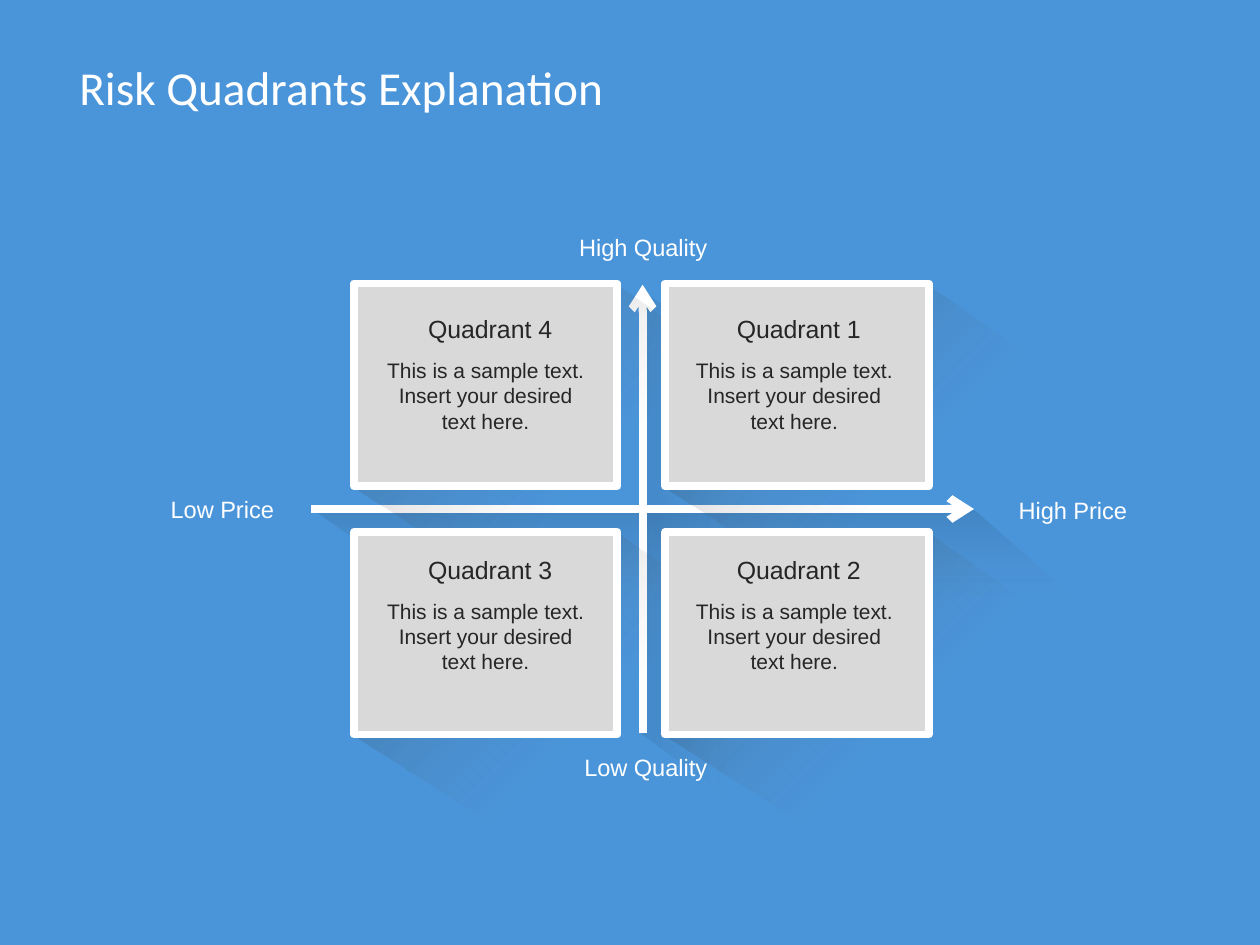
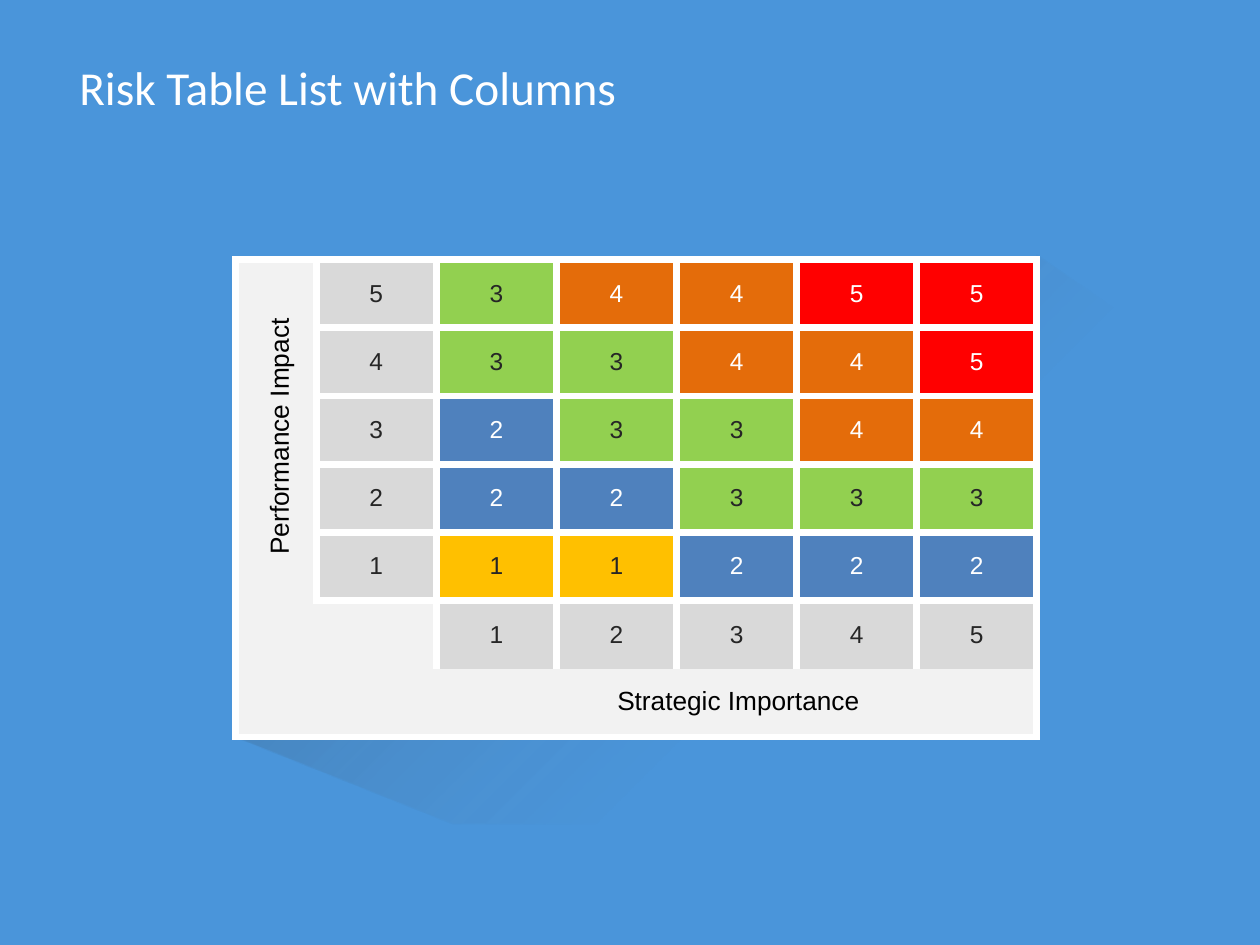
from lxml import etree
from pptx import Presentation
from pptx.dml.color import RGBColor
from pptx.enum.shapes import MSO_CONNECTOR as Connector, MSO_SHAPE as Shape
from pptx.enum.text import MSO_ANCHOR as Anchor, PP_ALIGN as Align
from pptx.oxml import parse_xml
from pptx.oxml.ns import nsdecls, qn
from pptx.util import Inches, Pt

COLORS = {
    "blue": "4A95DA", "white": "FFFFFF", "black": "000000", "ink": "262626",
    "card": "D9D9D9", "pale": "F2F2F2", "fade": "6B6B6B",
}
# Rating: cell fill, text colour
RATINGS = {
    "1": ("FFC000", "ink"), "2": ("4F81BD", "white"), "3": ("92D050", "ink"),
    "4": ("E46C0A", "white"), "5": ("FF0000", "white"),
}
STROKE = Pt(4.5)


def write(frame, text, size=13.5, color="white", font="Arial",
          align=Align.CENTER, wrap=False):
    """Fill a text frame with one formatted paragraph."""
    frame.word_wrap = wrap
    para = frame.paragraphs[0]
    para.alignment = align
    span = para.add_run()
    span.text = text
    span.font.size = Pt(size)
    span.font.name = font
    span.font.color.rgb = RGBColor.from_string(COLORS[color])


def add_shadow(page, points, opacity, fade_at, angle):
    """Draw a long cast shadow that fades to nothing at fade_at percent."""
    corners = [(Inches(x), Inches(y)) for x, y in points]
    outline = page.shapes.build_freeform(*corners[0])
    outline.add_line_segments(corners[1:], close=True)
    shadow = outline.convert_to_shape()
    shadow.shadow.inherit = False
    shadow.line.fill.background()
    shadow.fill.background()
    props = shadow.element.spPr
    gradient = parse_xml(
        f'<a:gradFill {nsdecls("a")} rotWithShape="1"><a:gsLst>'
        f'<a:gs pos="0"><a:srgbClr val="{COLORS["black"]}">'
        f'<a:alpha val="{opacity * 1000}"/></a:srgbClr></a:gs>'
        f'<a:gs pos="{fade_at * 1000}"><a:srgbClr val="{COLORS["fade"]}">'
        '<a:alpha val="0"/></a:srgbClr></a:gs></a:gsLst>'
        f'<a:lin ang="{angle * 60000}" scaled="0"/></a:gradFill>')
    props.replace(props.find(qn("a:noFill")), gradient)


deck = Presentation()
deck.slide_width, deck.slide_height = Inches(10), Inches(7.5)

pages = []
for title in ("Risk Quadrants Explanation", "Risk Table List with Columns"):
    page = deck.slides.add_slide(deck.slide_layouts[6])
    page.background.fill.solid()
    page.background.fill.fore_color.rgb = RGBColor.from_string(COLORS["blue"])
    frame = page.shapes.add_textbox(
        Inches(0.5), Inches(0.3), Inches(9), Inches(0.78)).text_frame
    frame.margin_left = frame.margin_right = Inches(0.13)
    frame.margin_top = frame.margin_bottom = Inches(0.07)
    frame.vertical_anchor = Anchor.MIDDLE
    write(frame, title, size=27, font="Calibri", align=Align.LEFT, wrap=True)
    pages.append(page)
quadrant_page, table_page = pages

# Quadrants: axes and their labels
add_shadow(quadrant_page, [(5.1, 5.83), (6.53, 6.88), (6.39, 3.2), (5.12, 2.32)],
           opacity=8, fade_at=48, angle=0)
add_shadow(quadrant_page, [(2.47, 4.04), (4.19, 5.24), (9.01, 5.17), (7.73, 4.05)],
           opacity=10, fade_at=59, angle=90)

for ends in ((5.1, 5.82, 5.1, 2.26), (2.47, 4.04, 7.73, 4.04)):
    axis = quadrant_page.shapes.add_connector(Connector.STRAIGHT, *map(Inches, ends))
    axis.line.color.rgb = RGBColor.from_string(COLORS["white"])
    axis.line.width = STROKE
    etree.SubElement(axis.line._get_or_add_ln(), qn("a:tailEnd"), type="arrow")
    etree.SubElement(axis.element.spPr, qn("a:effectLst"))

for text, left, top, width in (
        ("Low Price", 1.25, 3.88, 1.03), ("High Price", 7.98, 3.89, 1.07),
        ("Low Quality", 4.53, 5.93, 1.19), ("High Quality", 4.49, 1.8, 1.23)):
    box = quadrant_page.shapes.add_textbox(
        Inches(left), Inches(top), Inches(width), Inches(0.33))
    write(box.text_frame, text)

# Quadrants: four cards, then their texts
CAST = [(-0.01, 1.61), (1.14, 2.35), (3.43, 2.34), (3.4, 0.93), (2.07, 0), (2.05, 1.62)]
QUADRANTS = [(0, 0, 4), (0, 1, 1), (1, 0, 3), (1, 1, 2)]

for row, col, number in QUADRANTS:
    left, top = 2.81 + 2.47 * col, 2.25 + 1.97 * row
    add_shadow(quadrant_page, [(left + x, top + y) for x, y in CAST],
               opacity=30, fade_at=59, angle=45)
    card = quadrant_page.shapes.add_shape(
        Shape.RECTANGLE, Inches(left), Inches(top), Inches(2.09), Inches(1.61))
    card.shadow.inherit = False
    card.fill.solid()
    card.fill.fore_color.rgb = RGBColor.from_string(COLORS["card"])
    card.line.color.rgb = RGBColor.from_string(COLORS["white"])
    card.line.width = STROKE

for row, col, number in QUADRANTS:
    left, top = 2.96 + 2.45 * col, 2.44 + 1.91 * row
    heading = quadrant_page.shapes.add_textbox(
        Inches(left + 0.3), Inches(top), Inches(1.26), Inches(0.34))
    write(heading.text_frame, f"Quadrant {number}", size=14.2, color="ink")
    body = quadrant_page.shapes.add_textbox(
        Inches(left), Inches(top + 0.35), Inches(1.79), Inches(0.71))
    write(body.text_frame, "This is a sample text. Insert your desired text here.",
          size=12, color="ink", wrap=True)

# Risk table: the first column and the last row hold the axis titles
add_shadow(table_page, [(1.87, 5.85), (3.59, 6.54), (9.92, 6.56), (9.93, 3.19),
                        (8.22, 2.02), (8.17, 5.69)],
           opacity=30, fade_at=59, angle=45)

SCORES = ["534455", "433445", "323344", "222333", "111222"]
IMPORTANCE = "12345"
SCALE_ROW, TITLE_ROW = 5, 6

table = table_page.shapes.add_table(
    7, 7, Inches(1.87), Inches(2.06), Inches(6.36), Inches(3.79)).table
table.first_row = table.horz_banding = False
for index, column in enumerate(table.columns):
    column.width = Inches(0.95333 if index else 0.64)
for table_row in table.rows:
    table_row.height = Inches(3.79 / 7)

for row in range(7):
    for col in range(7):
        cell = table.cell(row, col)
        text, fill, ink = "", COLORS["pale"], "ink"
        if row < SCALE_ROW and col > 0:
            text = SCORES[row][col - 1]
            fill, ink = RATINGS[text] if col > 1 else (COLORS["card"], "ink")
        elif row == SCALE_ROW and col > 1:
            text, fill = IMPORTANCE[col - 2], COLORS["card"]
        cell.fill.solid()
        cell.fill.fore_color.rgb = RGBColor.from_string(fill)
        cell.vertical_anchor = Anchor.MIDDLE
        cell.margin_left = cell.margin_right = Inches(0.08)
        cell.margin_top = cell.margin_bottom = Inches(0.04)
        if text:
            write(cell.text_frame, text, size=14, color=ink, wrap=True)

        open_sides = {
            "L": (row, col) == (SCALE_ROW, 1),
            "R": (row, col) == (SCALE_ROW, 0),
            "T": row == TITLE_ROW or (col == 0 and row > 0),
            "B": row == SCALE_ROW or (col == 0 and row < TITLE_ROW),
        }
        for place, (side, is_open) in enumerate(open_sides.items()):
            paint = "<a:noFill/>" if is_open else (
                f'<a:solidFill><a:srgbClr val="{COLORS["white"]}"/></a:solidFill>')
            border = f'<a:ln{side} {nsdecls("a")} w="{STROKE}">{paint}</a:ln{side}>'
            cell._tc.get_or_add_tcPr().insert(place, parse_xml(border))

table.cell(0, 0).merge(table.cell(SCALE_ROW, 0))
table.cell(TITLE_ROW, 0).merge(table.cell(TITLE_ROW, 6))

for text, left, top, width, turn in (
        ("Performance Impact", 1.16, 3.29, 2.1, 270),
        ("Strategic Importance", 4.79, 5.38, 2.14, 0)):
    box = table_page.shapes.add_textbox(
        Inches(left), Inches(top), Inches(width), Inches(0.35))
    box.rotation = turn
    write(box.text_frame, text, size=15, color="black")

deck.save("out.pptx")
